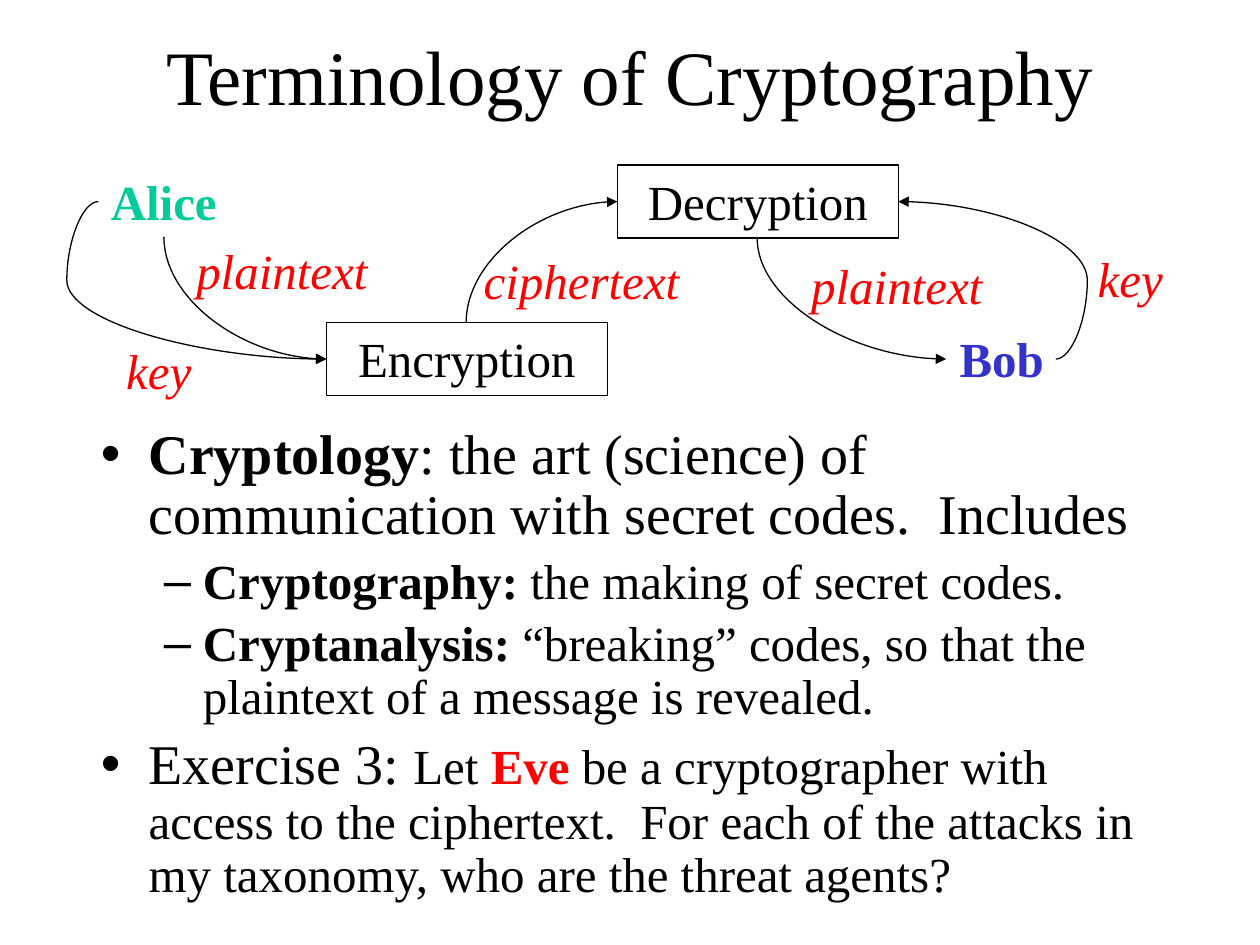
from lxml import etree
from pptx import Presentation
from pptx.dml.color import RGBColor
from pptx.enum.shapes import MSO_CONNECTOR, MSO_SHAPE
from pptx.enum.text import MSO_ANCHOR, MSO_AUTO_SIZE, PP_ALIGN
from pptx.oxml.ns import qn
from pptx.util import Inches, Pt

CURVE, RECTANGLE = MSO_CONNECTOR.CURVE, MSO_SHAPE.RECTANGLE
MIDDLE, TOP = MSO_ANCHOR.MIDDLE, MSO_ANCHOR.TOP
CENTER, LEFT = PP_ALIGN.CENTER, PP_ALIGN.LEFT
NO_FIT = MSO_AUTO_SIZE.NONE

FONT = "Times New Roman"
COLORS = {"black": "000000", "red": "FF0000", "green": "00CC99", "blue": "3333CC"}

TITLE = "Terminology of Cryptography"
# Paragraphs: (level, runs); runs: (text, size, format)
BOLD = {"bold": True}
BODY = [
    (0, [("Cryptology", 32, BOLD),
         (": the art (science) of communication with secret codes.  Includes", 32, {})]),
    (1, [("Cryptography:", 28, BOLD), (" the making of secret codes.", 28, {})]),
    (1, [("Cryptanalysis: ", 28, BOLD),
         ("“breaking” codes, so that the plaintext of a message is revealed.", 28, {})]),
    (0, [("Exercise 3: ", 32, {}), ("Let ", 28, {}),
         ("Eve", 28, {"bold": True, "color": "red"}),
         (" be a cryptographer with access to the ciphertext.  For each of the "
          "attacks in my taxonomy, who are the threat agents?", 28, {})]),
]
BULLETS = [("•", 0.38, 0.38), ("–", 0.81, 0.31)]  # mark, margin, hanging indent

# Two rows of the diagram: top edge and the line the arrows meet
UPPER, LOWER = 1.31, 2.56
UPPER_MID, LOWER_MID = 1.6, 2.85
STEP_WIDTH, STEP_HEIGHT = 2.23, 0.58
LABEL_HEIGHT = 0.57
STEPS = [("Encryption", 2.59, LOWER), ("Decryption", 4.9, UPPER)]
PERSON = {"bold": True}
MESSAGE = {"italic": True, "color": "red"}
LABELS = [  # text, left, top, width, alignment, format
    ("Alice", 0.78, UPPER, 1.04, CENTER, {**PERSON, "color": "green"}),
    ("Bob", 7.51, LOWER, 0.88, CENTER, {**PERSON, "color": "blue"}),
    ("plaintext", 1.46, 1.86, 1.56, LEFT, MESSAGE),
    ("plaintext", 6.34, 1.98, 1.56, LEFT, MESSAGE),
    ("ciphertext", 3.74, 1.94, 1.75, LEFT, MESSAGE),
    ("key", 0.9, 2.65, 0.72, CENTER, MESSAGE),
    ("key", 8.61, 1.92, 0.72, CENTER, MESSAGE),
]
QUARTER_ARROWS = [  # leave vertically, arrive from the left
    (1.3, 1.88, 2.59, LOWER_MID),
    (3.7, LOWER, 4.9, UPPER_MID),
    (6.01, 1.89, 7.51, LOWER_MID),
]
KEY_ARROWS = [  # bulge outwards behind their start
    (0.78, UPPER_MID, 2.59, LOWER_MID),
    (8.38, LOWER_MID, 7.13, UPPER_MID),
]
BULGE = 0.25


def add_run(para, text, size, color="black", **styles):
    span = para.add_run()
    span.text = text
    span.font.color.rgb = RGBColor.from_string(COLORS[color])
    for name, value in {"name": FONT, "size": Pt(size), **styles}.items():
        setattr(span.font, name, value)


def place(shape, left, top, width, height):
    for name, value in zip(("left", "top", "width", "height"), (left, top, width, height)):
        setattr(shape, name, Inches(value))


def set_bullet(para, level):
    mark, margin, hanging = BULLETS[level]
    para.level = level
    properties = para._p.get_or_add_pPr()
    properties.set("marL", str(Inches(margin)))
    properties.set("indent", str(-Inches(hanging)))
    etree.SubElement(properties, qn("a:buChar")).set("char", mark)


def add_curve(slide, start_x, start_y, end_x, end_y):
    curve = slide.shapes.add_connector(
        CURVE, *(Inches(value) for value in (start_x, start_y, end_x, end_y)))
    curve.line.color.rgb = RGBColor.from_string(COLORS["black"])
    curve.line.width = Pt(0.75)
    etree.SubElement(curve.line._get_or_add_ln(), qn("a:tailEnd")).set("type", "triangle")
    etree.SubElement(curve._element.spPr, qn("a:effectLst"))
    return curve


def add_quarter_arrow(slide, start_x, start_y, end_x, end_y):
    """Turn a horizontal-first quarter curve by 270 degrees about its centre."""
    curve = add_curve(slide, start_x, start_y, end_x, end_y)
    across, down = end_x - start_x, abs(end_y - start_y)
    place(curve, (start_x + end_x - down) / 2, (start_y + end_y - across) / 2, down, across)
    properties = curve._element.spPr
    properties.find(qn("a:prstGeom")).set("prst", "curvedConnector2")
    frame = properties.find(qn("a:xfrm"))
    frame.set("rot", str(270 * 60000))
    frame.set("flipH", "1" if end_y > start_y else "0")
    frame.set("flipV", "0")


def add_key_arrow(slide, start_x, start_y, end_x, end_y):
    curve = add_curve(slide, start_x, start_y, end_x, end_y)
    adjustments = curve._element.spPr.find(qn("a:prstGeom")).find(qn("a:avLst"))
    guide = etree.SubElement(adjustments, qn("a:gd"))
    guide.set("name", "adj1")
    guide.set("fmla", f"val {round(-BULGE / abs(end_x - start_x) * 100000)}")


def fill_title(title):
    place(title, 0.75, 0.05, 8.5, 1.09)
    title.text_frame.auto_size = NO_FIT
    title.text_frame.vertical_anchor = MIDDLE
    para = title.text_frame.paragraphs[0]
    para.alignment = CENTER
    add_run(para, TITLE, 44)


def fill_body(body):
    place(body, 0.7, 3.33, 8.5, 3.7)
    frame = body.text_frame
    frame.auto_size = NO_FIT
    frame.vertical_anchor = TOP
    for index, (level, runs) in enumerate(BODY):
        para = frame.paragraphs[0] if index == 0 else frame.add_paragraph()
        set_bullet(para, level)
        para.line_spacing = 0.9
        para.space_before = Pt(0.2 * runs[0][1] if index else 0)
        for text, size, styles in runs:
            add_run(para, text, size, **styles)


def add_step(slide, text, left, top):
    box = slide.shapes.add_shape(RECTANGLE, 0, 0, 0, 0)
    place(box, left, top, STEP_WIDTH, STEP_HEIGHT)
    box.shadow.inherit = False
    box.fill.background()
    box.line.color.rgb = RGBColor.from_string(COLORS["black"])
    box.line.width = Pt(0.75)
    box.text_frame.vertical_anchor = TOP
    para = box.text_frame.paragraphs[0]
    para.alignment = CENTER
    add_run(para, text, 28)


def add_label(slide, text, left, top, width, alignment, styles):
    box = slide.shapes.add_textbox(0, 0, 0, 0)
    place(box, left, top, width, LABEL_HEIGHT)
    box.text_frame.word_wrap = False
    para = box.text_frame.paragraphs[0]
    para.alignment = alignment
    add_run(para, text, 28, **styles)


def main():
    deck = Presentation()
    deck.slide_width, deck.slide_height = Inches(10), Inches(7.5)
    slide = deck.slides.add_slide(deck.slide_layouts[1])
    fill_title(slide.shapes.title)
    fill_body(slide.placeholders[1])
    for step in STEPS:
        add_step(slide, *step)
    for label in LABELS:
        add_label(slide, *label)
    for ends in QUARTER_ARROWS:
        add_quarter_arrow(slide, *ends)
    for ends in KEY_ARROWS:
        add_key_arrow(slide, *ends)
    deck.save("out.pptx")


if __name__ == "__main__":
    main()
